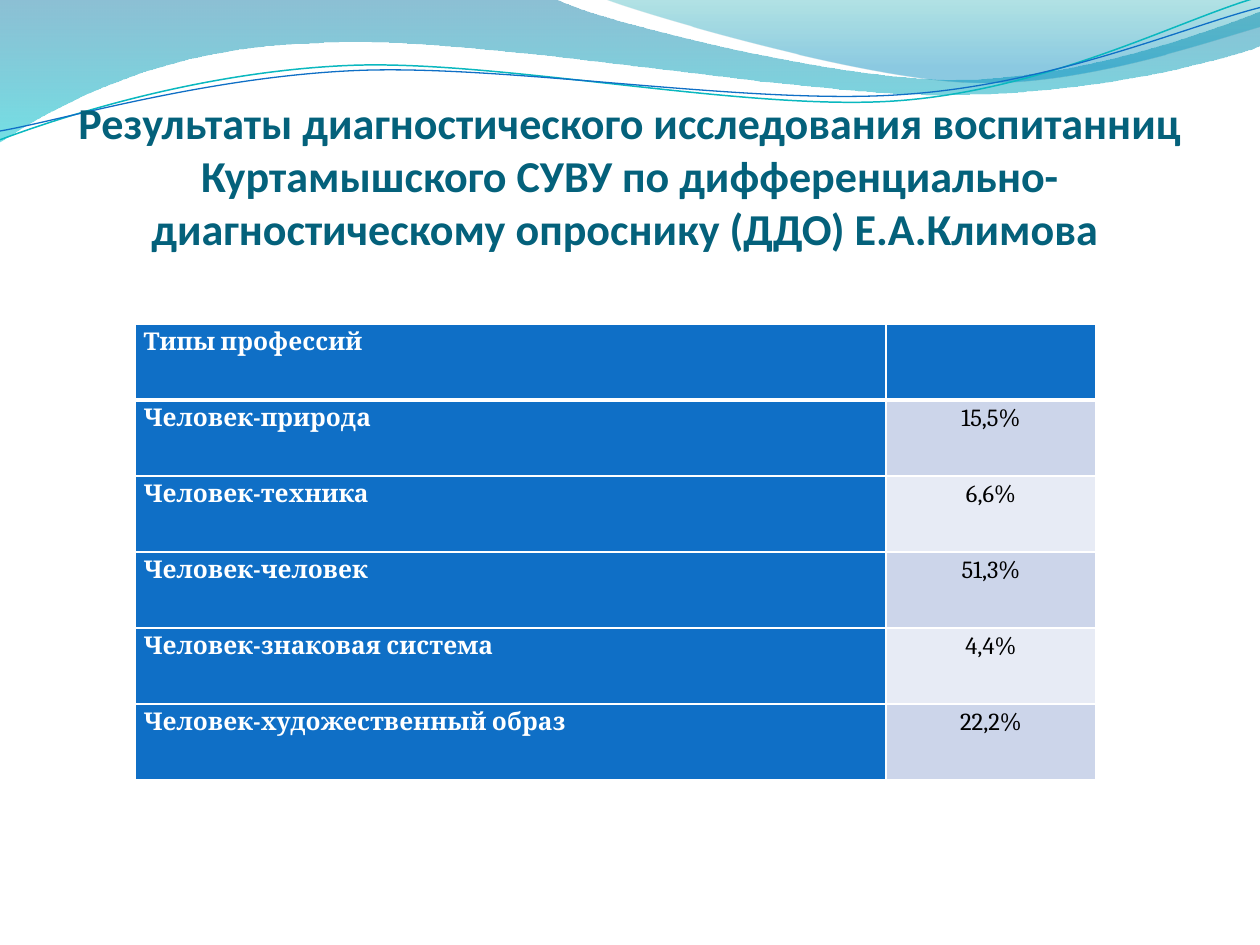
from lxml.etree import SubElement
from pptx import Presentation
from pptx.dml.color import RGBColor
from pptx.enum.text import MSO_ANCHOR, PP_ALIGN
from pptx.oxml.ns import qn
from pptx.util import Inches, Pt

BLUE, WHITE, BLACK = "0F6FC6", "FFFFFF", "000000"
BANDS = "CCD5EA", "E7EBF5"
TITLE = ("Результаты диагностического исследования воспитанниц Куртамышского "
         "СУВУ по дифференциально- диагностическому опроснику (ДДО) Е.А.Климова ")
ROWS = [
    ("Типы профессий", ""),
    ("Человек-природа", "15,5%"),
    ("Человек-техника", "6,6%"),
    ("Человек-человек", "51,3%"),
    ("Человек-знаковая система", "4,4%"),
    ("Человек-художественный образ", "22,2%"),
]

# Each outline is a start point, then lines (x, y) and cubic curves (three points).
WAVE = [(0, 0), (4.4, -0.01), (4.76, 0.17, 6.64, 0.63, 7.58, 0.63),
        (8.53, 0.63, 9.58, 0.26, 10, 0.09), (10.01, 0.36),
        (9.83, 0.44, 8.7, 0.76, 7.46, 0.75), (6.22, 0.75, 3.82, 0.28, 2.57, 0.34),
        (1.29, 0.36, 0.46, 0.83, -0.01, 1.13)]
CREST = [(4.79, -0.01), (5.09, 0.11, 6.82, 0.62, 7.69, 0.65),
         (8.56, 0.69, 9.61, 0.32, 10, 0.21), (10, 0)]
TEAL = [(0, 1.11), (0.48, 0.93, 1.58, 0.57, 2.77, 0.52),
        (3.95, 0.47, 5.93, 0.89, 7.13, 0.8), (8.33, 0.71, 9.38, 0.15, 9.98, -0.02)]
NAVY = [(0, 1.04), (0.47, 0.96, 1.64, 0.61, 2.83, 0.56),
        (4.03, 0.51, 5.97, 0.84, 7.17, 0.75), (8.36, 0.67, 9.41, 0.21, 10, 0.06)]


def color(code):
    return RGBColor.from_string(code)


class Deck:
    def __init__(self, width, height):
        self.prs = Presentation()
        self.prs.slide_width, self.prs.slide_height = Inches(width), Inches(height)
        self.slide = self.prs.slides.add_slide(self.prs.slide_layouts[5])
        self.shapes = self.slide.shapes

    def outline(self, path, close):
        """Draw straight lines between the nodes, then bend those that are curves."""
        nodes = [(Inches(part[-2]), Inches(part[-1])) for part in path]
        pen = self.shapes.build_freeform(*nodes[0])
        pen.add_line_segments(nodes[1:], close=close)
        shape = pen.convert_to_shape()
        shape.shadow.inherit = False
        lines = list(shape._element.iter(qn("a:lnTo")))
        for line, part in zip(lines, path[1:]):
            if len(part) == 6:
                self.bend(shape, line, part)
        return shape

    def bend(self, shape, line, part):
        curve = line.makeelement(qn("a:cubicBezTo"))
        for x, y in zip(part[::2], part[1::2]):
            SubElement(curve, qn("a:pt"), x=str(Inches(x) - shape.left),
                       y=str(Inches(y) - shape.top))
        line.getparent().replace(line, curve)

    def wave(self, path, *stops):
        """Filled outline; each stop is (position, colour, opacity in percent)."""
        shape = self.outline(path, True)
        shape.line.fill.background()
        shape.fill.gradient()
        shape.fill.gradient_angle = 270
        for stop, (place, code, alpha) in zip(shape.fill.gradient_stops, stops):
            stop.position = place
            stop.color.rgb = color(code)
            tint = stop._gs.find(qn("a:srgbClr"))
            SubElement(tint, qn("a:alpha"), val=str(alpha * 1000))

    def curve(self, path, code, width):
        shape = self.outline(path, False)
        shape.fill.background()
        shape.line.color.rgb = color(code)
        shape.line.width = Pt(width)

    def style(self, para, font, size, code, bold, align):
        para.alignment = align
        para.font.name, para.font.size = font, Pt(size)
        para.font.bold, para.font.color.rgb = bold, color(code)

    def title(self, text, left, top, width, height):
        box = self.shapes.title
        self.shapes._spTree.append(box._element)  # in front of the waves
        box.left, box.top = Inches(left), Inches(top)
        box.width, box.height = Inches(width), Inches(height)
        frame = box.text_frame
        frame.text, frame.word_wrap = text, True
        frame.vertical_anchor = MSO_ANCHOR.BOTTOM
        frame.margin_left = frame.margin_right = frame.margin_bottom = 0
        frame.margin_top = Inches(0.05)
        self.style(frame.paragraphs[0], "Calibri", 25.2, "04617B", True, PP_ALIGN.CENTER)

    def border(self, cell, side, width):
        line = SubElement(cell._tc.get_or_add_tcPr(), qn("a:ln" + side), w=str(Pt(width)))
        SubElement(SubElement(line, qn("a:solidFill")), qn("a:srgbClr"), val=WHITE)

    def cell(self, cell, text, row, col):
        head = row == 0 or col == 0
        cell.margin_left = cell.margin_right = Inches(0.07)
        cell.margin_top = cell.margin_bottom = 0
        for side in "LRTB":
            thick = (row, side) in ((0, "B"), (1, "T"))
            self.border(cell, side, 3 if thick else 1)
        cell.fill.solid()
        cell.fill.fore_color.rgb = color(BLUE if head else BANDS[(row - 1) % 2])
        cell.text = text
        para = cell.text_frame.paragraphs[0]
        para.line_spacing, para.space_after = 1.15, Pt(10)
        self.style(para, "Cambria", 14, WHITE if head else BLACK, head,
                   PP_ALIGN.CENTER if col else PP_ALIGN.LEFT)

    def table(self, rows, left, top, widths, height):
        grid = self.shapes.add_table(
            len(rows), len(widths), Inches(left), Inches(top),
            Inches(sum(widths)), Inches(height)).table
        for col, width in zip(grid.columns, widths):
            col.width = Inches(width)
        for r, row in enumerate(rows):
            grid.rows[r].height = Inches(height / len(rows))
            for c, text in enumerate(row):
                self.cell(grid.cell(r, c), text, r, c)


def main():
    deck = Deck(10, 7.5)
    deck.wave(WAVE, (0, "0074A1", 45), (1, "00C6CF", 55))
    deck.wave(CREST, (0, "00A1A9", 30), (0.8, "008BBF", 45))
    deck.curve(TEAL, "0AB8BF", 0.85)
    deck.curve(NAVY, BLUE, 0.75)
    deck.title(TITLE, 0.5, 0.77, 9, 1.25)
    deck.table(ROWS, 1.07, 2.57, (5.96, 1.67), 3.62)
    deck.prs.save("out.pptx")


if __name__ == "__main__":
    main()
